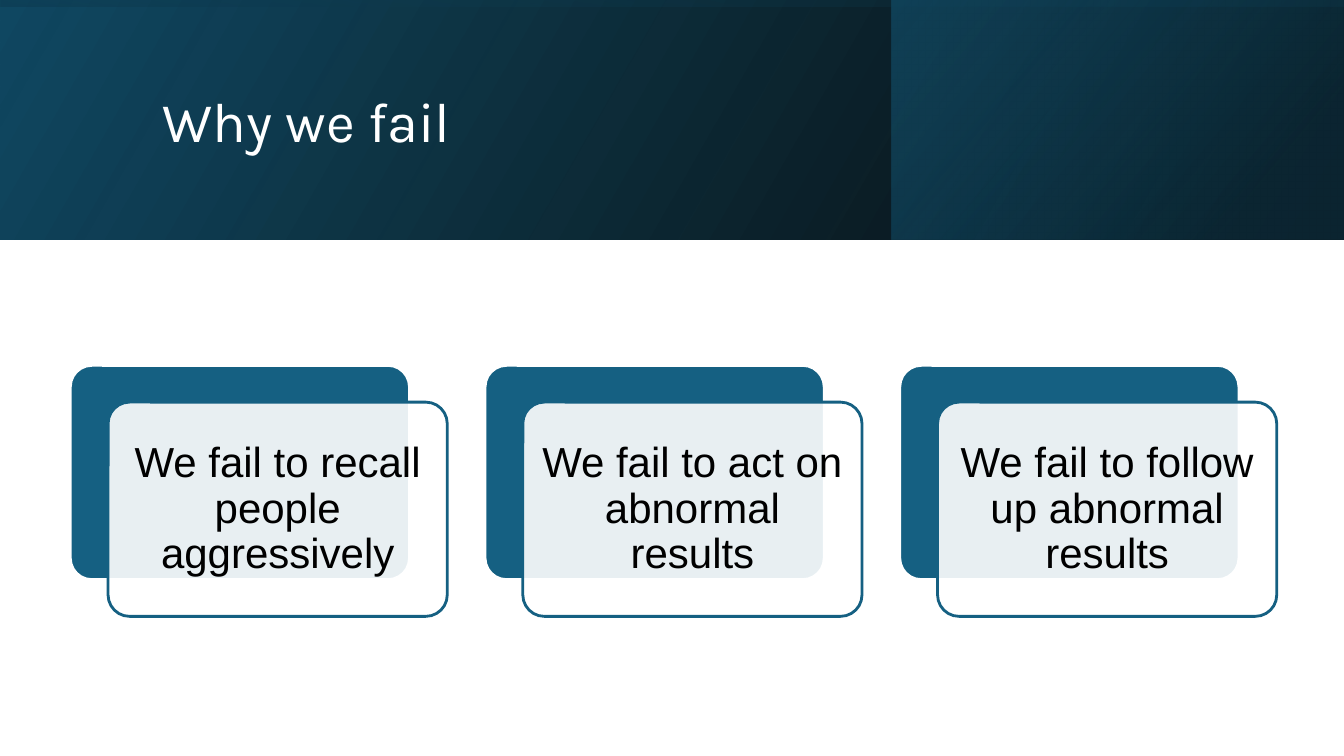
from lxml import etree
from pptx import Presentation, util as u
from pptx.dml.color import RGBColor
from pptx.enum import shapes, text
from pptx.oxml.ns import qn

PX = 9525
INK = {"white": "FFFFFF", "black": "000000", "teal": "156082",
       "navy": "104862", "deep": "0B3041"}
KIND = shapes.MSO_SHAPE


def block(home, kind, *box):
    shape = home.add_shape(kind, *[n * PX for n in box])
    shape.shadow.inherit = False
    return shape


def label(home, box, words, size, font, ink, inset):
    area = home.add_textbox(*[n * PX for n in box])
    frame = area.text_frame
    frame.word_wrap = True
    frame.vertical_anchor = text.MSO_ANCHOR.MIDDLE
    frame.margin_left = frame.margin_right = inset * PX
    frame.margin_top = frame.margin_bottom = inset * PX
    para = frame.paragraphs[0]
    para.line_spacing = 0.9
    run = para.add_run()
    run.text = words
    run.font.size = u.Pt(size)
    run.font.name = font
    run.font.color.rgb = RGBColor.from_string(INK[ink])
    return para


deck = Presentation()
deck.slide_width = 1280 * PX
deck.slide_height = 720 * PX
slide = deck.slides.add_slide(deck.slide_layouts[6])

bands = [
    ((0, 0, 1280, 228), 0, 330, [(0, "black", 96), (100, "navy", 100)]),
    ((849, 0, 430, 228), 0, 320, [(19, "deep", 68), (100, "teal", 48)]),
    ((526, -526, 228, 1280), 270, 350, [(23, "navy", 16), (99, "black", 45)]),
]
for box, turn, angle, stops in bands:
    band = block(slide.shapes, KIND.RECTANGLE, *box)
    band.rotation = turn
    band.line.fill.background()
    band.fill.gradient()
    props = band.element.spPr
    props.find(qn("a:xfrm")).set("flipH", "1")
    grad = props.find(qn("a:gradFill"))
    for child in list(grad):
        grad.remove(child)
    ramp = etree.SubElement(grad, qn("a:gsLst"))
    for place, ink, alpha in stops:
        stop = etree.SubElement(ramp, qn("a:gs"), pos=str(place * 1000))
        tint = etree.SubElement(stop, qn("a:srgbClr"), val=INK[ink])
        etree.SubElement(tint, qn("a:alpha"), val=str(alpha * 1000))
    etree.SubElement(grad, qn("a:lin"), ang=str(angle * 60000), scaled="0")

label(slide.shapes, (145, 36, 1020, 165), "Why we fail", 40, "Karla", "white", 10)

cards = slide.shapes.add_group_shape().shapes
points = [
    "We fail to recall people aggressively",
    "We fail to act on abnormal results",
    "We fail to follow up abnormal results",
]
for i, words in enumerate(points):
    left = 67 + 395 * i
    for x, y, fill, edge in [(left, 348, "teal", "white"),
                             (left + 36, 383, "white", "teal")]:
        card = block(cards, KIND.ROUNDED_RECTANGLE, x, y, 323, 204)
        card.adjustments[0] = 0.1
        card.fill.solid()
        card.fill.fore_color.rgb = RGBColor.from_string(INK[fill])
        card.line.color.rgb = RGBColor.from_string(INK[edge])
        card.line.width = u.Pt(2)
    tint = card.element.spPr.find(qn("a:solidFill"))[0]
    etree.SubElement(tint, qn("a:alpha"), val="90000")
    para = label(cards, (left + 42, 389, 311, 193), words, 30, "Arial", "black", 11)
    para.alignment = text.PP_ALIGN.CENTER

deck.save("out.pptx")
